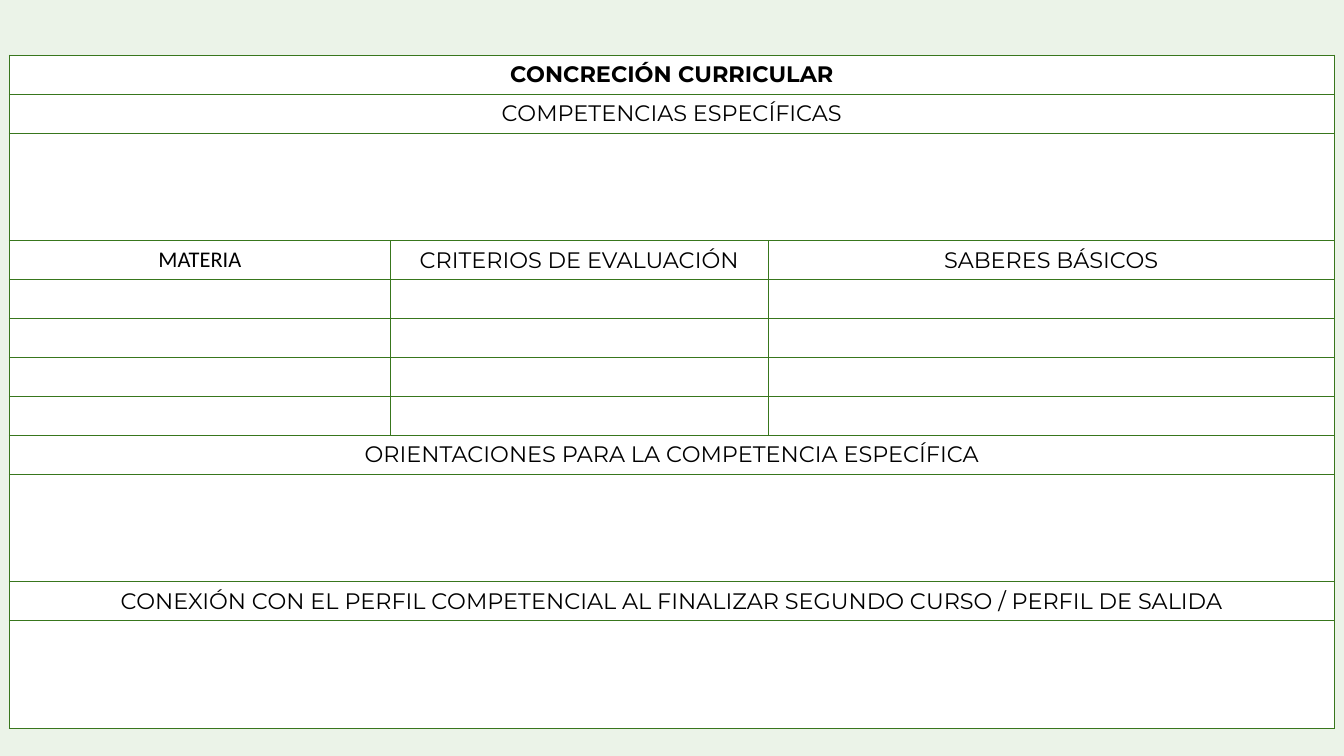
from lxml import etree
from pptx import Presentation
from pptx import util as u
from pptx.dml.color import RGBColor
from pptx.enum import text
from pptx.oxml.ns import qn

COLORS = {"page": "EBF3E8", "cell": "FFFFFF", "border": "38761D", "text": "000000"}
LABEL, BLOCK = 0.29, 0.8  # row heights
FULL, SPLIT = (7,), (2, 2, 3)  # columns covered by each cell
FIRST_COLUMN, COLUMNS = 1.43, 7
LEFT, TOP, WIDTH = 0.07, 0.41, 9.86

# height, spans, texts
ROWS = [
    (LABEL, FULL, ["CONCRECIÓN CURRICULAR"]),
    (LABEL, FULL, ["COMPETENCIAS ESPECÍFICAS"]),
    (BLOCK, FULL, [""]),
    (LABEL, SPLIT, ["MATERIA", "CRITERIOS DE EVALUACIÓN", "SABERES BÁSICOS"]),
    *[(LABEL, SPLIT, ["", "", ""])] * 4,
    (LABEL, FULL, ["ORIENTACIONES PARA LA COMPETENCIA ESPECÍFICA"]),
    (BLOCK, FULL, [""]),
    (LABEL, FULL, ["CONEXIÓN CON EL PERFIL COMPETENCIAL AL FINALIZAR SEGUNDO CURSO / PERFIL DE SALIDA"]),
    (BLOCK, FULL, [""]),
]
FORMATS = {"CONCRECIÓN CURRICULAR": {"bold": True}, "MATERIA": {"font": "Calibri"}}


def write(cell, words, font="Montserrat", size=12, bold=False):
    para = cell.text_frame.paragraphs[0]
    para.alignment = text.PP_ALIGN.CENTER
    if not words:  # keeps an empty row from growing to the default text size
        etree.SubElement(para._p, qn("a:endParaRPr"), sz=str(size * 100))
        return
    span = para.add_run()
    span.text = words
    span.font.name, span.font.size, span.font.bold = font, u.Pt(size), bold
    span.font.color.rgb = RGBColor.from_string(COLORS["text"])


def style(cell):
    cell.margin_left = cell.margin_right = u.Inches(0.07)
    cell.margin_top = cell.margin_bottom = 0
    cell.vertical_anchor = text.MSO_ANCHOR.MIDDLE
    properties = cell._tc.get_or_add_tcPr()
    for side in ("lnL", "lnR", "lnT", "lnB"):
        line = etree.SubElement(properties, qn(f"a:{side}"), w=str(u.Pt(0.5)))
        fill = etree.SubElement(line, qn("a:solidFill"))
        etree.SubElement(fill, qn("a:srgbClr"), val=COLORS["border"])
    cell.fill.solid()
    cell.fill.fore_color.rgb = RGBColor.from_string(COLORS["cell"])


deck = Presentation()
deck.slide_width, deck.slide_height = u.Inches(10), u.Inches(10 * 9 / 16)
page = deck.slides.add_slide(deck.slide_layouts[6])
page.background.fill.solid()
page.background.fill.fore_color.rgb = RGBColor.from_string(COLORS["page"])

height = sum(row[0] for row in ROWS)
table = page.shapes.add_table(
    len(ROWS), COLUMNS, *map(u.Inches, (LEFT, TOP, WIDTH, height))).table
table.first_row = table.horz_banding = False
for index, column in enumerate(table.columns):
    other = (WIDTH - FIRST_COLUMN) / (COLUMNS - 1)
    column.width = u.Inches(other if index else FIRST_COLUMN)
for cell in table.iter_cells():
    style(cell)

for row, (row_height, spans, texts) in enumerate(ROWS):
    table.rows[row].height = u.Inches(row_height)
    start = 0
    for width, words in zip(spans, texts):
        cell = table.cell(row, start)
        cell.merge(table.cell(row, start + width - 1))
        write(cell, words, **FORMATS.get(words, {}))
        start += width

deck.save("out.pptx")
